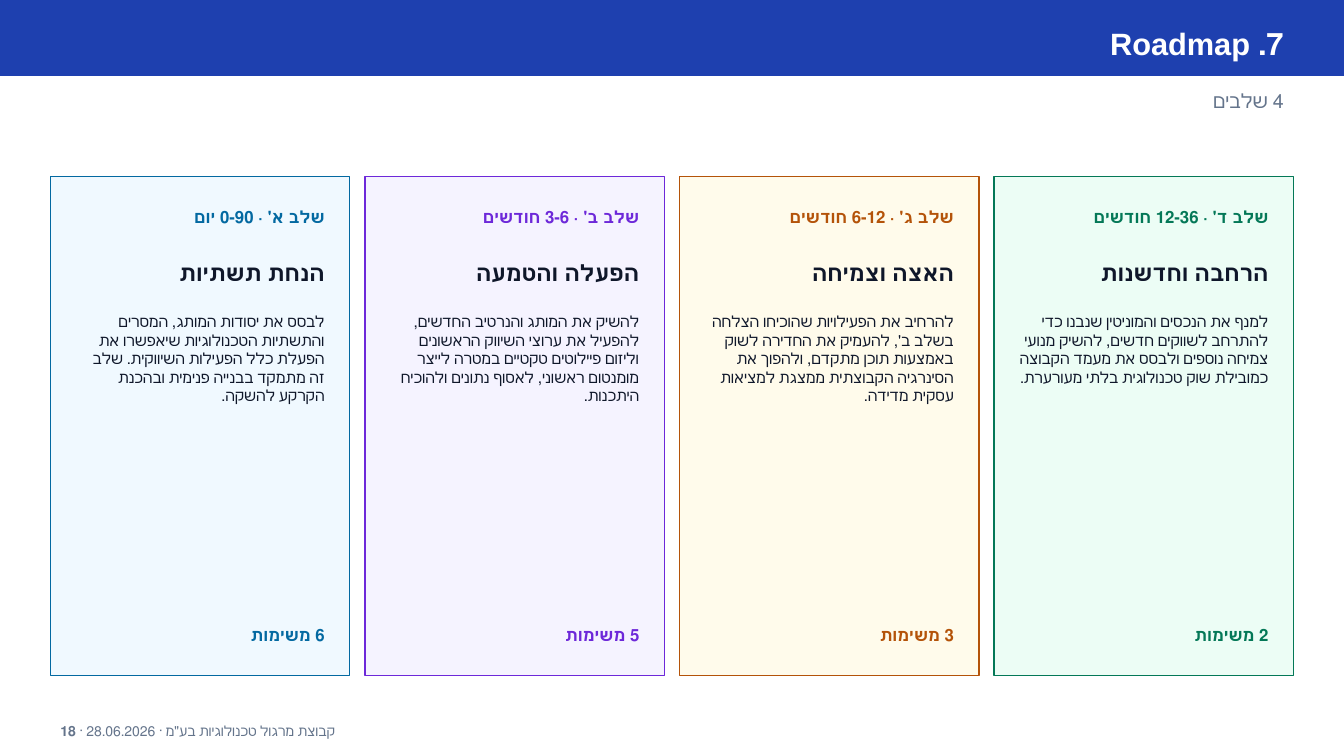
from pptx import Presentation
from pptx.dml.color import RGBColor
from pptx.enum.shapes import MSO_SHAPE as Shape
from pptx.enum.text import MSO_ANCHOR as Anchor, PP_ALIGN as Align
from pptx.util import Pt

WIDTH, HEIGHT = 960, 540
MARGIN = 36
CONTENT_WIDTH = WIDTH - 2 * MARGIN
CARD_TOP, CARD_HEIGHT = 126, 356.4
CARD_GAP, CARD_PADDING = 10.8, 10.8

BLUE, WHITE, MUTED, INK = "1E40AF", "FFFFFF", "64748B", "0F172A"

# period, heading, summary, tasks, accent colour, fill colour
PHASES = [
    ("שלב א' · 0-90 יום", "הנחת תשתיות",
     "לבסס את יסודות המותג, המסרים והתשתיות הטכנולוגיות שיאפשרו את הפעלת "
     "כלל הפעילות השיווקית. שלב זה מתמקד בבנייה פנימית ובהכנת הקרקע להשקה.",
     "6 משימות", "0369A1", "F0F9FF"),
    ("שלב ב' · 3-6 חודשים", "הפעלה והטמעה",
     "להשיק את המותג והנרטיב החדשים, להפעיל את ערוצי השיווק הראשונים וליזום "
     "פיילוטים טקטיים במטרה לייצר מומנטום ראשוני, לאסוף נתונים ולהוכיח היתכנות.",
     "5 משימות", "6D28D9", "F5F3FF"),
    ("שלב ג' · 6-12 חודשים", "האצה וצמיחה",
     "להרחיב את הפעילויות שהוכיחו הצלחה בשלב ב', להעמיק את החדירה לשוק באמצעות "
     "תוכן מתקדם, ולהפוך את הסינרגיה הקבוצתית ממצגת למציאות עסקית מדידה.",
     "3 משימות", "B45309", "FFFBEB"),
    ("שלב ד' · 12-36 חודשים", "הרחבה וחדשנות",
     "למנף את הנכסים והמוניטין שנבנו כדי להתרחב לשווקים חדשים, להשיק מנועי "
     "צמיחה נוספים ולבסס את מעמד הקבוצה כמובילת שוק טכנולוגית בלתי מעורערת.",
     "2 משימות", "047857", "ECFDF5"),
]


def color(hex_value):
    return RGBColor.from_string(hex_value)


class RoadmapSlide:
    font = "Arial"

    def __init__(self, deck):
        self.slide = deck.slides.add_slide(deck.slide_layouts.get_by_name("Title Only"))
        self.shapes = self.slide.shapes

    def box(self, left, top, width, height, fill, line):
        box = self.shapes.add_shape(
            Shape.RECTANGLE, Pt(left), Pt(top), Pt(width), Pt(height))
        box.shadow.inherit = False
        box.fill.solid()
        box.fill.fore_color.rgb = color(fill)
        box.line.color.rgb = color(line)
        box.line.width = Pt(1)
        return box

    def set_text(self, frame, runs, size, hex_value, anchor=Anchor.MIDDLE, rtl=True):
        """Fill a text frame with one paragraph of (text, bold) runs."""
        frame.word_wrap = True
        frame.vertical_anchor = anchor
        paragraph = frame.paragraphs[0]
        paragraph.alignment = Align.RIGHT if rtl else Align.LEFT
        if rtl:
            paragraph._p.get_or_add_pPr().set("rtl", "1")
        for text, bold in runs:
            run = paragraph.add_run()
            run.text = text
            run.font.name = self.font
            run.font.size = Pt(size)
            run.font.bold = bold
            run.font.color.rgb = color(hex_value)

    def text(self, left, top, width, height, runs, size, hex_value, **layout):
        label = self.shapes.add_textbox(Pt(left), Pt(top), Pt(width), Pt(height))
        self.set_text(label.text_frame, runs, size, hex_value, **layout)

    def title(self, text):
        """Set the title on a full-width band that lies behind it."""
        title = self.shapes.title
        title.left, title.top = Pt(MARGIN), Pt(7.2)
        title.width, title.height = Pt(CONTENT_WIDTH), Pt(46.8)
        self.set_text(title.text_frame, [(text, True)], 22, WHITE)
        band = self.box(0, 0, WIDTH, 54, BLUE, BLUE)
        title.element.addprevious(band.element)

    def card(self, left, width, phase):
        period, heading, summary, tasks, accent, fill = phase
        self.box(left, CARD_TOP, width, CARD_HEIGHT, fill, accent)
        rows = [
            (14.4, 28.8, period, True, 12, accent, Anchor.MIDDLE),
            (50.4, 36, heading, True, 16, INK, Anchor.MIDDLE),
            (93.6, 198, summary, False, 11, INK, Anchor.TOP),
            (313.2, 28.8, tasks, True, 12, accent, Anchor.MIDDLE),
        ]
        for offset, height, text, bold, size, hex_value, anchor in rows:
            self.text(left + CARD_PADDING, CARD_TOP + offset, width - 2 * CARD_PADDING,
                      height, [(text, bold)], size, hex_value, anchor=anchor)


def main():
    deck = Presentation()
    deck.slide_width, deck.slide_height = Pt(WIDTH), Pt(HEIGHT)
    roadmap = RoadmapSlide(deck)
    roadmap.title("7. Roadmap")
    roadmap.text(MARGIN, 57.6, CONTENT_WIDTH, 28.8, [("4 שלבים", False)], 14, MUTED)

    card_width = (CONTENT_WIDTH - CARD_GAP * (len(PHASES) - 1)) / len(PHASES)
    for index, phase in enumerate(PHASES):
        roadmap.card(MARGIN + index * (card_width + CARD_GAP), card_width, phase)

    # The separators stand between em spaces.
    footer = [("קבוצת מרגול טכנולוגיות בע\"מ · 28.06.2026 · ", False), ("18", True)]
    roadmap.text(MARGIN, 511.2, CONTENT_WIDTH, 21.6, footer, 10, MUTED, rtl=False)
    deck.save("out.pptx")


if __name__ == "__main__":
    main()
